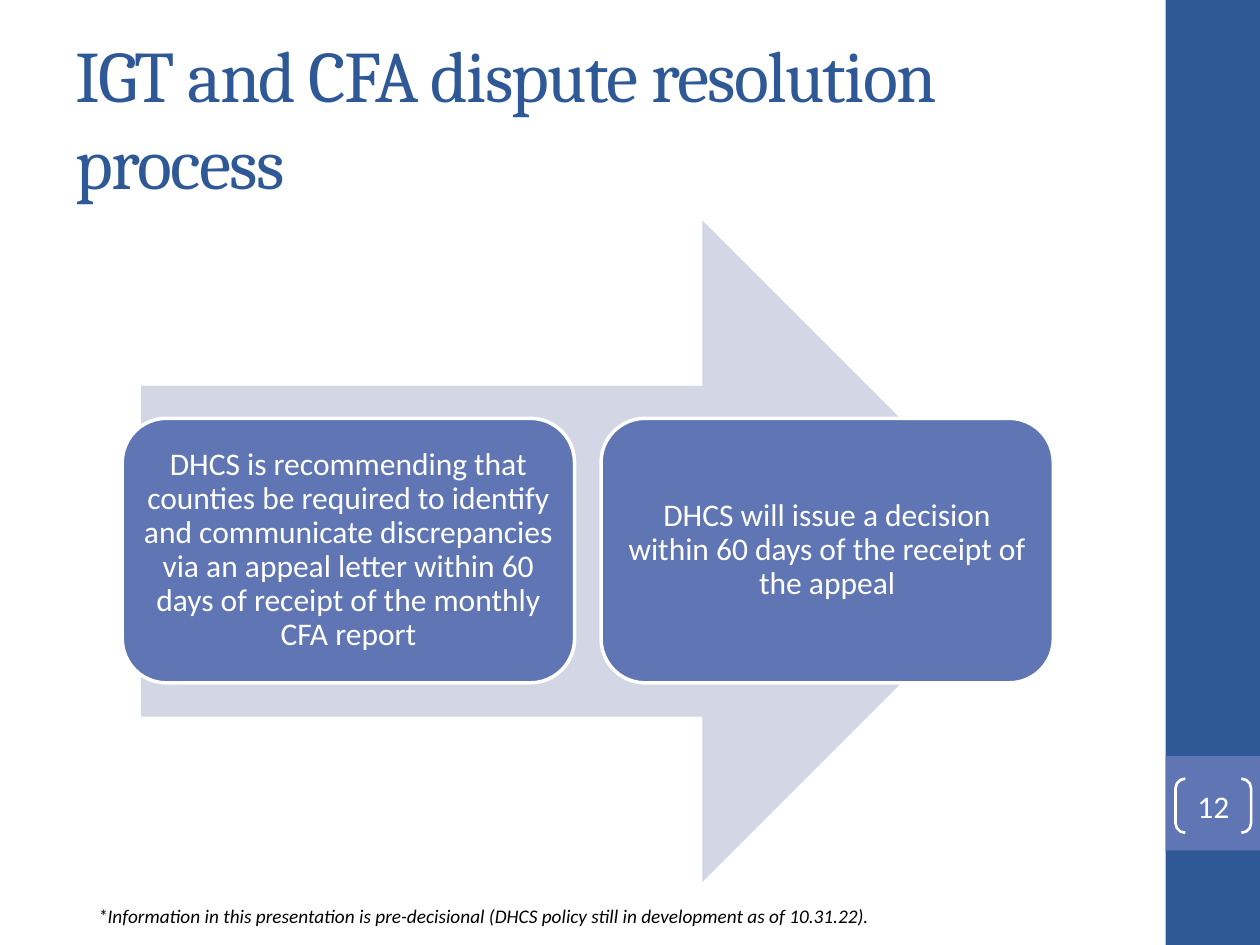
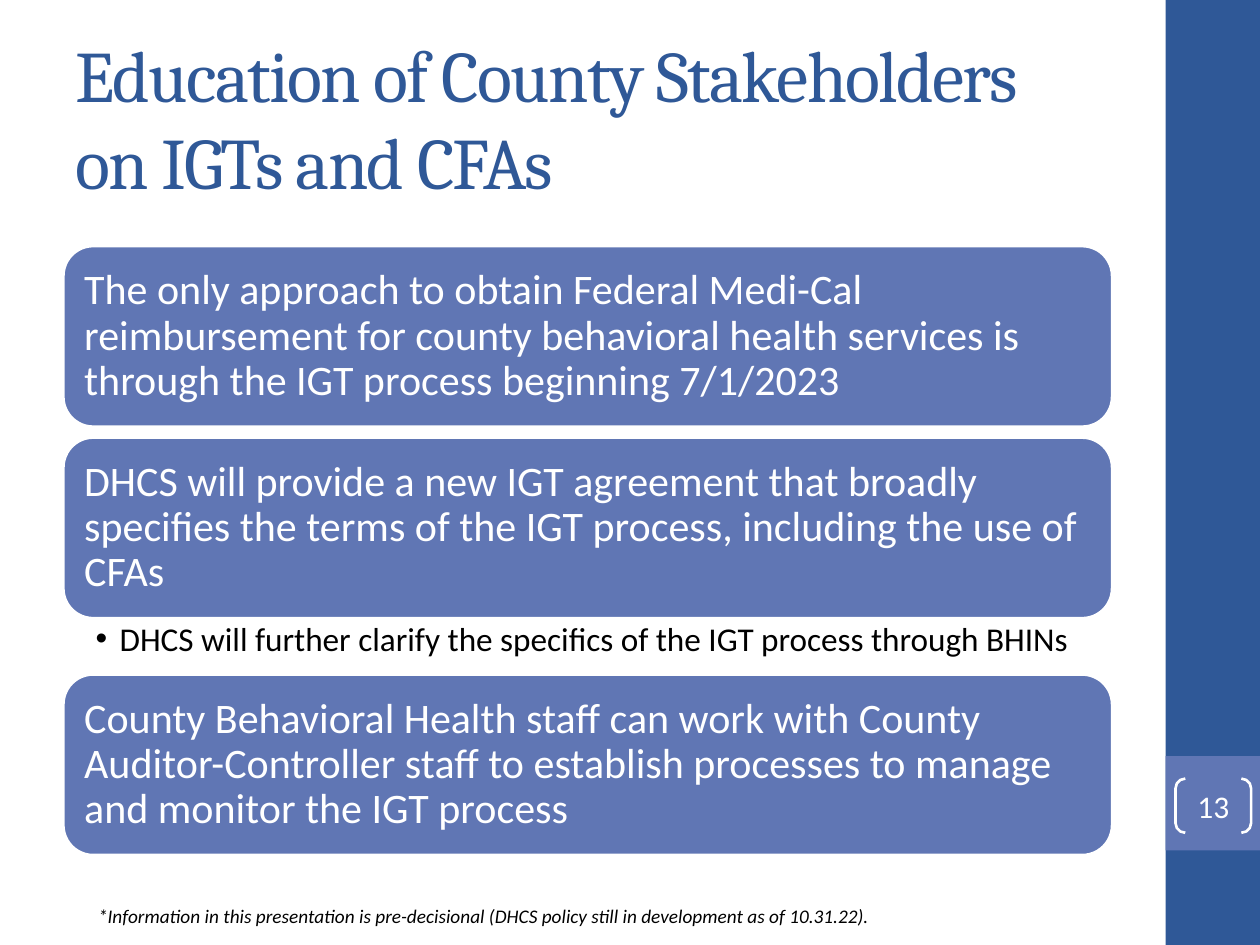
from pptx import Presentation
from pptx.dml.color import RGBColor
from pptx.enum.shapes import MSO_SHAPE as Shape
from pptx.enum.text import MSO_ANCHOR as Anchor, MSO_AUTO_SIZE as AutoSize, PP_ALIGN as Align
from pptx.util import Pt

EMU_PER_PX = 9144
COLORS = {
    "navy": "2F5897",
    "blue": "6076B4",
    "pale": "D2D6E5",
    "white": "FFFFFF",
    "black": "000000",
}
HEADING, BODY = "Cambria", "Calibri"
TITLE_ONLY, TITLE_AND_BODY = 5, 1
DISCLAIMER = ("*Information in this presentation is pre-decisional "
              "(DHCS policy still in development as of 10.31.22).")

DISPUTE_STEPS = [
    "DHCS is recommending that counties be required to identify and communicate "
    "discrepancies via an appeal letter within 60 days of receipt of the monthly CFA report",
    "DHCS will issue a decision within 60 days of the receipt of the appeal",
]
EDUCATION_POINTS = [
    ("The only approach to obtain Federal Medi-Cal reimbursement for county behavioral "
     "health services is through the IGT process beginning 7/1/2023", None),
    ("DHCS will provide a new IGT agreement that broadly specifies the terms of the IGT "
     "process, including the use of CFAs",
     "DHCS will further clarify the specifics of the IGT process through BHINs"),
    ("County Behavioral Health staff can work with County Auditor-Controller staff to "
     "establish processes to manage and monitor the IGT process", None),
]


def px(length):
    return length * EMU_PER_PX


def color(name):
    return RGBColor.from_string(COLORS[name])


class Deck:
    def __init__(self):
        self.prs = Presentation()
        self.prs.slide_width, self.prs.slide_height = px(1000), px(750)
        self.slide = None

    def new_slide(self, layout, title, number):
        self.slide = self.prs.slides.add_slide(self.prs.slide_layouts[layout])
        self.shape(Shape.RECTANGLE, (925, 0, 75, 750), "navy")
        self.shape(Shape.RECTANGLE, (925, 600, 75, 75), "blue")
        self.disclaimer()
        self.title(title)
        self.page_number(number)

    def shape(self, preset, box, fill=None, line=None, weight=2):
        shape = self.slide.shapes.add_shape(preset, *map(px, box))
        shape.shadow.inherit = False
        if fill:
            shape.fill.solid()
            shape.fill.fore_color.rgb = color(fill)
        else:
            shape.fill.background()
        if line:
            shape.line.color.rgb = color(line)
            shape.line.width = Pt(weight)
        else:
            shape.line.fill.background()
        return shape

    def add_text(self, frame, text, size, ink, font=BODY, align=Align.LEFT,
                 anchor=Anchor.MIDDLE, insets=(10, 5, 10, 5), spacing=None, italic=False):
        frame.word_wrap = True
        frame.auto_size = AutoSize.NONE
        frame.vertical_anchor = anchor
        (frame.margin_left, frame.margin_top,
         frame.margin_right, frame.margin_bottom) = map(px, insets)
        paragraph = frame.paragraphs[0]
        paragraph.alignment = align
        paragraph.space_before = Pt(0)
        if spacing:
            paragraph.line_spacing = spacing
        run = paragraph.add_run()
        run.text = text
        run.font.name, run.font.size = font, Pt(size)
        run.font.italic = italic
        run.font.color.rgb = color(ink)
        return paragraph, run

    def place(self, placeholder, box):
        (placeholder.left, placeholder.top,
         placeholder.width, placeholder.height) = map(px, box)
        return placeholder.text_frame

    def title(self, text):
        frame = self.place(self.slide.shapes.title, (50, 30, 833, 125))
        _, run = self.add_text(frame, text, 41.4, "navy", HEADING)
        run.font._element.set("spc", "-100")

    def disclaimer(self):
        note = self.slide.shapes.add_textbox(*map(px, (68, 713, 826, 29)))
        self.add_text(note.text_frame, DISCLAIMER, 11, "black", anchor=Anchor.TOP, italic=True)

    def page_number(self, number):
        brackets = self.shape(Shape.DOUBLE_BRACKET, (933, 618, 60, 43), None, "white", 1.5)
        brackets.adjustments[0] = 0.18
        self.add_text(brackets.text_frame, str(number), 18, "white",
                      align=Align.CENTER, insets=(0, 0, 0, 0))

    def card(self, box, text, size, inset, align=Align.LEFT):
        card = self.shape(Shape.ROUNDED_RECTANGLE, box, "blue", "white")
        self.add_text(card.text_frame, text, size, "white", align=align,
                      insets=(inset,) * 4, spacing=0.9)

    def bullet(self, box, text):
        frame = self.place(self.slide.placeholders[1], box)
        paragraph, _ = self.add_text(frame, text, 19, "black", anchor=Anchor.TOP,
                                     insets=(26, 3, 19, 3), spacing=0.9)
        properties = paragraph._p.get_or_add_pPr()
        properties.set("marL", str(px(19)))
        properties.set("indent", str(px(-19)))


def dispute_slide(deck):
    deck.new_slide(TITLE_ONLY, "IGT and CFA dispute resolution process", 12)
    deck.shape(Shape.RIGHT_ARROW, (112, 175, 708, 525), "pale")
    for index, step in enumerate(DISPUTE_STEPS):
        deck.card((97 + index * 380, 332, 359, 210), step, 18, 7, Align.CENTER)


def education_slide(deck):
    deck.new_slide(TITLE_AND_BODY, "Education of County Stakeholders on IGTs and CFAs", 13)
    left, top, width, card_height, detail_height, gap = 50, 195, 833, 144, 44, 8
    for point, detail in EDUCATION_POINTS:
        deck.card((left, top, width, card_height), point, 24, 10)
        top += card_height
        if detail:
            deck.bullet((left, top, width, detail_height), detail)
            top += detail_height
        else:
            top += gap


def main():
    deck = Deck()
    dispute_slide(deck)
    education_slide(deck)
    deck.prs.save("out.pptx")


if __name__ == "__main__":
    main()
